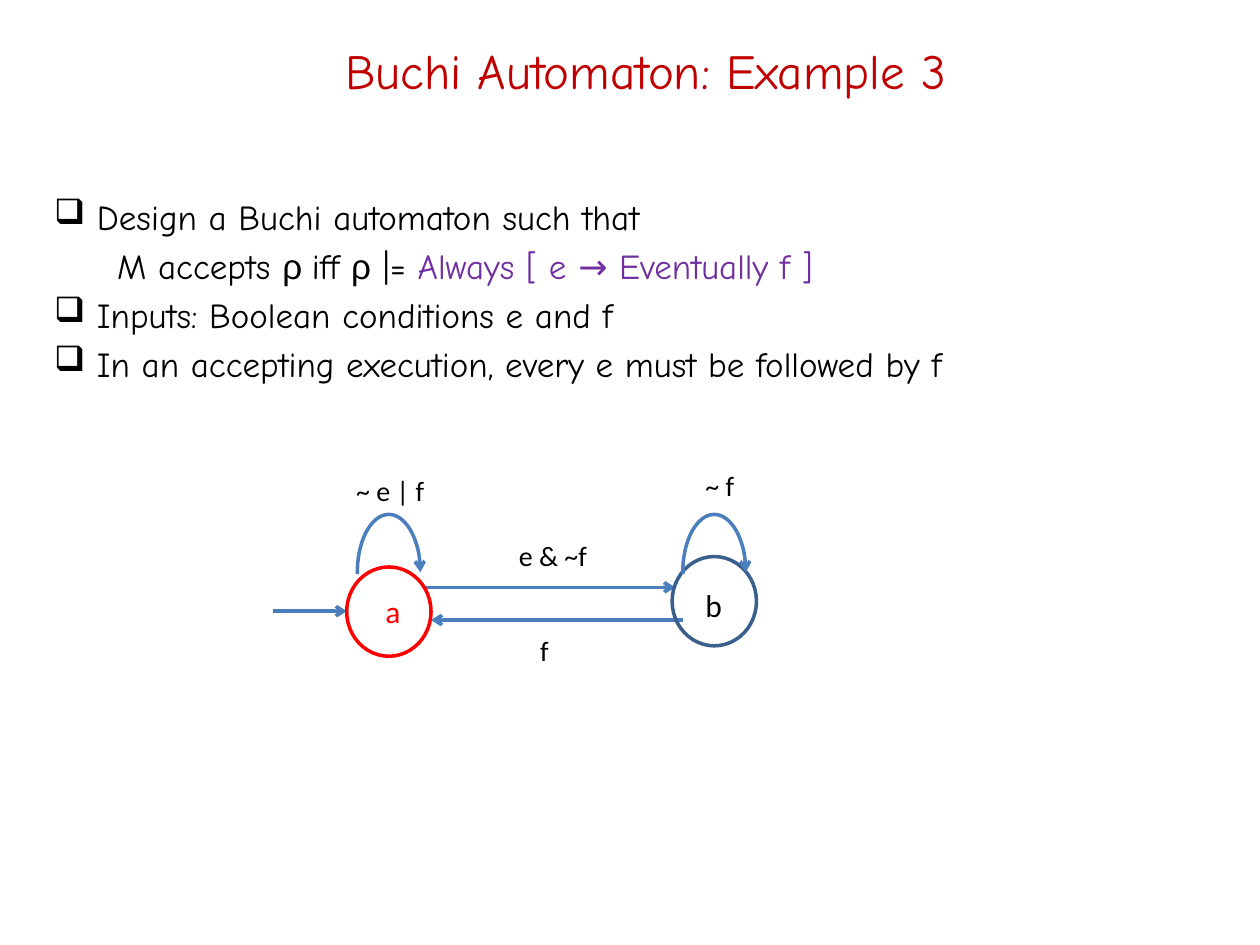
from pptx import Presentation
from pptx import util as u
from pptx.dml.color import RGBColor
from pptx.enum import shapes, text
from pptx.oxml.ns import qn
from lxml import etree

THEME = {
    "black": "000000", "title": "C00000", "formula": "7030A0",
    "edge": "4B7EBC", "state": "3A5F8C", "accepting": "FF0000",
    "hand": "Comic Neue", "greek": "Arial", "diagram": "Calibri",
    "title_size": 28, "body_size": 20, "state_size": 18, "label_size": 16,
    "line_width": 2,
}

TITLE = "Buchi Automaton: Example 3"
BODY = [
    ("❑", [(" Design a Buchi automaton such that", "hand", "black")]),
    (None, [
        ("\tM accepts ", "hand", "black"),
        ("ρ ", "greek", "black"),
        ("iff ", "hand", "black"),
        ("ρ", "greek", "black"),
        (" |= ", "hand", "black"),
        ("Always [ e → Eventually f ]", "hand", "formula"),
    ]),
    ("❑", [(" Inputs: Boolean conditions e and f", "hand", "black")]),
    ("❑", [(" In an accepting execution, every e must be followed by f", "hand", "black")]),
]

STATE_SIZE = (1.7, 1.8)
STATES = [
    ("b", (13.55, 11.22), "state", "black", (13.97, 11.68)),
    ("a", (6.99, 11.43), "accepting", "accepting", (7.52, 11.81)),
]
LOOP_SIZE = (1.27, 2.33)
LOOP_TOP = 10.37
TRANSITIONS = [
    ((5.51, 12.32), (6.99, 12.32)),
    ((8.53, 11.84), (13.61, 11.84)),
    ((13.77, 12.5), (8.69, 12.5)),
]
LABELS = [
    ("~ e | f", (6.93, 9.42, 1.9, 0.94)),
    ("~ f", (13.97, 9.32, 1.22, 0.94)),
    ("e & ~f", (10.21, 10.74, 2.03, 0.94)),
    ("f", (10.64, 12.65, 0.81, 0.94)),
]


def cm(values):
    return [u.Cm(value) for value in values]


def color(name):
    return RGBColor.from_string(THEME[name])


def add_run(paragraph, content, font="diagram", size="label_size", ink="black"):
    run = paragraph.add_run()
    run.text = content
    run.font.name = THEME[font]
    run.font.size = u.Pt(THEME[size])
    run.font.color.rgb = color(ink)


def add_box(slide, box, wrap=True, grow=False, anchor=text.MSO_ANCHOR.TOP):
    frame = slide.shapes.add_textbox(*cm(box)).text_frame
    frame.word_wrap = wrap
    frame.vertical_anchor = anchor
    if grow:
        frame.auto_size = text.MSO_AUTO_SIZE.SHAPE_TO_FIT_TEXT
    return frame


def set_bullet(paragraph, symbol):
    properties = paragraph._p.get_or_add_pPr()
    properties.set("marL", "0")
    properties.set("indent", "0")
    if symbol:
        etree.SubElement(properties, qn("a:buChar")).set("char", symbol)
    else:
        etree.SubElement(properties, qn("a:buNone"))


def style_line(shape, ink, arrow=False):
    shape.line.color.rgb = color(ink)
    shape.line.width = u.Pt(THEME["line_width"])
    if arrow:
        etree.SubElement(shape.line._get_or_add_ln(), qn("a:tailEnd")).set("type", "arrow")


def add_outline(slide, kind, box, ink, arrow=False):
    shape = slide.shapes.add_shape(kind, *cm(box))
    shape.shadow.inherit = False
    shape.fill.background()
    style_line(shape, ink, arrow)
    return shape


def add_arrow(slide, start, end):
    connector = slide.shapes.add_connector(shapes.MSO_CONNECTOR.STRAIGHT, *cm(start + end))
    style_line(connector, "edge", arrow=True)
    etree.SubElement(connector._element.spPr, qn("a:effectLst"))


def add_state(slide, name, corner, ink, name_ink, name_corner):
    add_outline(slide, shapes.MSO_SHAPE.OVAL, corner + STATE_SIZE, ink)
    frame = add_box(slide, name_corner + (0.61, 1.02), grow=True)
    add_run(frame.paragraphs[0], name, size="state_size", ink=name_ink)
    loop_left = corner[0] + (STATE_SIZE[0] - LOOP_SIZE[0]) / 2
    loop = add_outline(slide, shapes.MSO_SHAPE.ARC, (loop_left, LOOP_TOP) + LOOP_SIZE,
                       "edge", arrow=True)
    loop.adjustments[0] = 105.92
    loop.adjustments[1] = 0


def main():
    presentation = Presentation()
    presentation.slide_width, presentation.slide_height = cm((25.4, 19.05))
    slide = presentation.slides.add_slide(presentation.slide_layouts[6])

    title = add_box(slide, (1.9, 0.43, 22.23, 1.98), anchor=text.MSO_ANCHOR.MIDDLE).paragraphs[0]
    title.alignment = text.PP_ALIGN.CENTER
    add_run(title, TITLE, font="hand", size="title_size", ink="title")

    body = add_box(slide, (0.84, 3.81, 22.66, 5.08))
    for index, (symbol, runs) in enumerate(BODY):
        paragraph = body.add_paragraph() if index else body.paragraphs[0]
        paragraph.space_before = u.Pt(0.2 * THEME["body_size"])
        set_bullet(paragraph, symbol)
        for content, font, ink in runs:
            add_run(paragraph, content, font=font, size="body_size", ink=ink)

    for start, end in TRANSITIONS:
        add_arrow(slide, start, end)
    for state in STATES:
        add_state(slide, *state)
    for content, box in LABELS:
        add_run(add_box(slide, box, wrap=False, grow=True).paragraphs[0], content)

    presentation.save("out.pptx")


if __name__ == "__main__":
    main()
